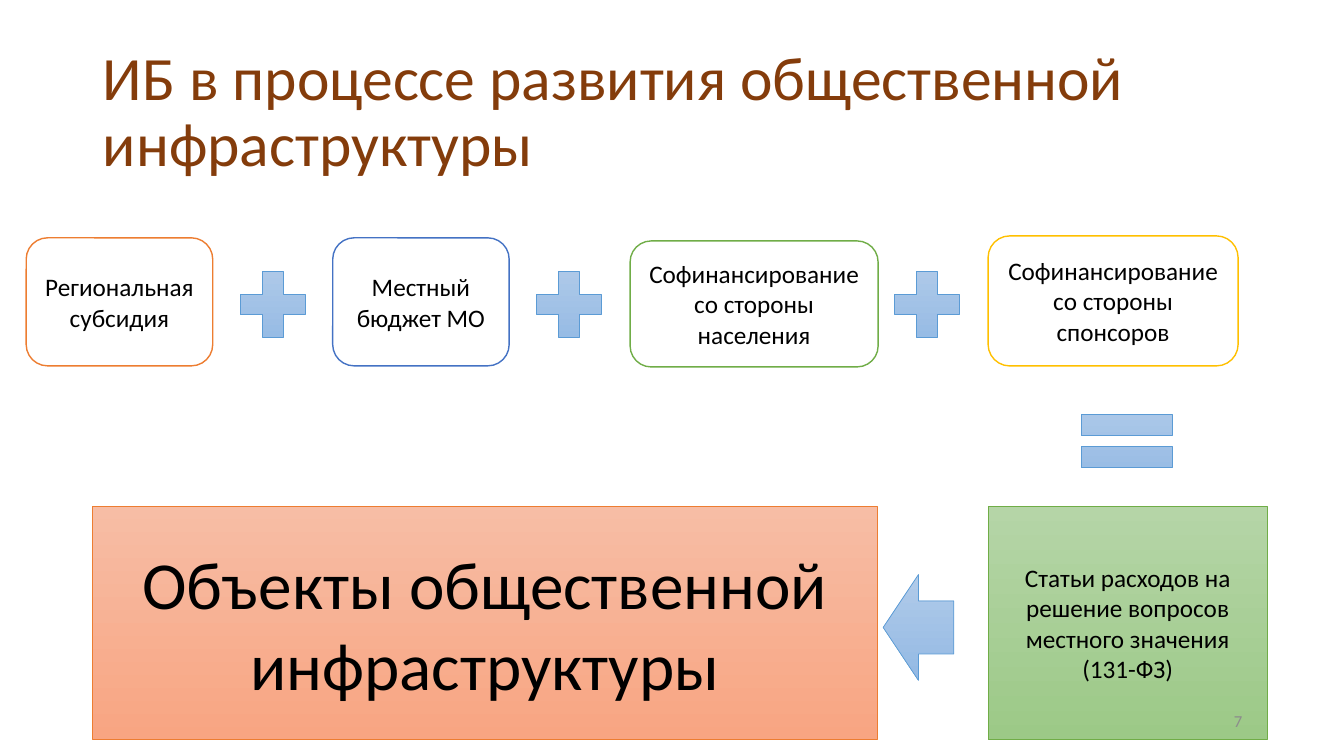
from pptx import Presentation, util as u
from pptx.dml.color import RGBColor
from pptx.enum import shapes, text

Inches = u.Inches
KIND = shapes.MSO_SHAPE
ALIGN = text.PP_ALIGN

COLORS = {
    "title": "843C0B", "black": "000000", "white": "FFFFFF", "number": "8C8C8C",
    "orange": "ED7D31", "blue": "4472C4", "green": "70AD47", "gold": "FFC000",
    "sky": "5B9BD5",
}
GRADIENTS = {
    "sky": ("B1CBE9", "93B9E4"),
    "green": ("B5D5A7", "9CC987"),
    "orange": ("F7BDA5", "F8A582"),
}


def rgb(name):
    return RGBColor.from_string(COLORS[name])


def write(shape, words, size, color, align):
    frame = shape.text_frame
    frame.text = words
    frame.word_wrap = True
    frame.auto_size = text.MSO_AUTO_SIZE.NONE
    frame.vertical_anchor = text.MSO_ANCHOR.MIDDLE
    para = frame.paragraphs[0]
    para.alignment = align
    for span in para.runs:
        span.font.name = "Calibri"
        span.font.size = u.Pt(size)
        span.font.color.rgb = rgb(color)
    return para


def add_outlined(page, kind, box, color, width):
    shape = page.shapes.add_shape(kind, *map(Inches, box))
    shape.shadow.inherit = False
    shape.line.color.rgb = rgb(color)
    shape.line.width = u.Pt(width)
    return shape


def add_source(page, kind, box, color, words):
    shape = add_outlined(page, kind, box, color, 1)
    shape.fill.solid()
    shape.fill.fore_color.rgb = rgb("white")
    write(shape, words, 18, "black", ALIGN.CENTER)


def add_shaded(page, kind, box, color):
    shape = add_outlined(page, kind, box, color, 0.5)
    shape.fill.gradient()
    shape.fill.gradient_angle = 270
    for stop, shade in zip(shape.fill.gradient_stops, GRADIENTS[color]):
        stop.color.rgb = RGBColor.from_string(shade)
    return shape


def add_title(page, box):
    title = page.shapes.title
    title.left, title.top, title.width, title.height = map(Inches, box)
    para = write(title, "ИБ в процессе развития общественной инфраструктуры",
                 44, "title", ALIGN.LEFT)
    para.line_spacing = 0.9


def add_sources(page, left, top):
    rounded, process = KIND.ROUNDED_RECTANGLE, KIND.FLOWCHART_ALTERNATE_PROCESS
    sources = [
        (process, 0, 0.02, 1.85, 1.27, "orange", "Региональная субсидия"),
        (rounded, 3.04, 0.02, 1.75, 1.27, "blue", "Местный бюджет МО"),
        (process, 5.99, 0.05, 2.46, 1.25, "green", "Софинансирование со стороны населения"),
        (rounded, 9.54, 0, 2.48, 1.29, "gold", "Софинансирование со стороны спонсоров"),
    ]
    for kind, x, y, width, height, color, words in sources:
        add_source(page, kind, (left + x, top + y, width, height), color, words)
    for x in (2.01, 4.95, 8.5):
        add_shaded(page, KIND.MATH_PLUS, (left + x, top + 0.24, 0.87, 0.88), "sky")


def add_result(page, left, top, height):
    add_shaded(page, KIND.MATH_EQUAL, (left + 9.64, top - 1.09, 1.23, 0.89), "sky")
    blocks = [
        (8.88, 2.77, "green", 18,
         "Статьи расходов на решение вопросов местного значения (131-ФЗ)"),
        (0, 7.78, "orange", 48, "Объекты общественной инфраструктуры"),
    ]
    for x, width, color, size, words in blocks:
        block = add_shaded(page, KIND.RECTANGLE, (left + x, top, width, height), color)
        write(block, words, size, "black", ALIGN.CENTER)
    add_shaded(page, KIND.LEFT_ARROW, (left + 7.84, top + 0.68, 0.7, 1.05), "sky")


def add_page_number(page, box):
    number = page.shapes.add_textbox(*map(Inches, box))
    write(number, "7", 12, "number", ALIGN.RIGHT)


def main():
    deck = Presentation()
    deck.slide_width, deck.slide_height = Inches(13.33), Inches(7.5)
    page = deck.slides.add_slide(deck.slide_layouts[5])
    add_title(page, (0.92, 0.4, 11.5, 1.45))
    add_sources(page, 0.26, 2.34)
    add_result(page, 0.92, 5.02, 2.32)
    add_page_number(page, (9.42, 6.95, 3, 0.4))
    deck.save("out.pptx")


if __name__ == "__main__":
    main()
